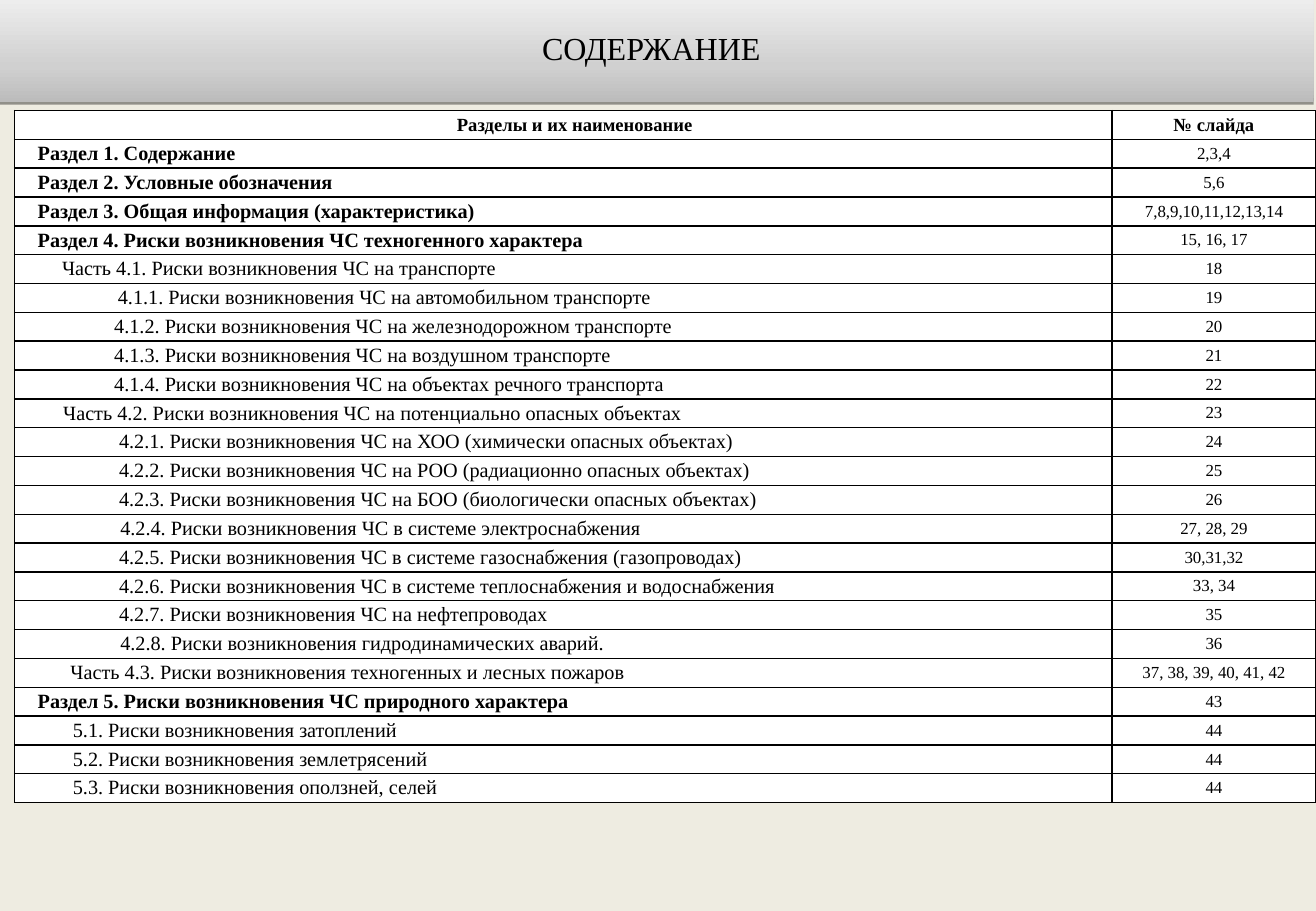
from lxml import etree
from pptx import Presentation
from pptx.dml.color import RGBColor
from pptx.enum.text import MSO_ANCHOR, MSO_AUTO_SIZE, PP_ALIGN
from pptx.oxml import parse_xml
from pptx.oxml.ns import nsdecls, qn
from pptx.util import Inches, Pt

MIDDLE = MSO_ANCHOR.MIDDLE
LEFT, CENTER = PP_ALIGN.LEFT, PP_ALIGN.CENTER
FONT = "Times New Roman"
BLACK = RGBColor(0, 0, 0)
WHITE = RGBColor(255, 255, 255)
CREAM = RGBColor(0xEE, 0xEC, 0xE1)
GRAYS = [(0, RGBColor(0xBC, 0xBC, 0xBC)), (35, RGBColor(0xD0, 0xD0, 0xD0)),
         (100, RGBColor(0xED, 0xED, 0xED))]

TITLE = "СОДЕРЖАНИЕ"
HEADS = ("Разделы и их наименование", "№ слайда")
# Indent in inches, section name, slide numbers
ROWS = [
    (0.19, "Раздел 1. Содержание", "2,3,4"),
    (0.19, "Раздел 2. Условные обозначения", "5,6"),
    (0.19, "Раздел 3. Общая информация (характеристика)", "7,8,9,10,11,12,13,14"),
    (0.19, "Раздел 4. Риски возникновения ЧС техногенного характера", "15, 16, 17"),
    (0.39, "Часть 4.1. Риски возникновения ЧС на транспорте", "18"),
    (0.85, "4.1.1. Риски возникновения ЧС на автомобильном транспорте", "19"),
    (0.82, "4.1.2. Риски возникновения ЧС на железнодорожном транспорте", "20"),
    (0.82, "4.1.3. Риски возникновения ЧС на воздушном транспорте", "21"),
    (0.82, "4.1.4. Риски возникновения ЧС на объектах речного транспорта", "22"),
    (0.4, "Часть 4.2. Риски возникновения ЧС на потенциально опасных объектах", "23"),
    (0.86, "4.2.1. Риски возникновения ЧС на ХОО (химически опасных объектах)", "24"),
    (0.86, "4.2.2. Риски возникновения ЧС на РОО (радиационно опасных объектах)", "25"),
    (0.86, "4.2.3. Риски возникновения ЧС на БОО (биологически опасных объектах)", "26"),
    (0.87, "4.2.4. Риски возникновения ЧС в системе электроснабжения", "27, 28, 29"),
    (0.86, "4.2.5. Риски возникновения ЧС в системе газоснабжения (газопроводах)", "30,31,32"),
    (0.86, "4.2.6. Риски возникновения ЧС в системе теплоснабжения и водоснабжения", "33, 34"),
    (0.86, "4.2.7. Риски возникновения ЧС на нефтепроводах", "35"),
    (0.87, "4.2.8. Риски возникновения гидродинамических аварий.", "36"),
    (0.46, "Часть 4.3. Риски возникновения техногенных и лесных пожаров",
     "37, 38, 39, 40, 41, 42"),
    (0.19, "Раздел 5. Риски возникновения ЧС природного характера", "43"),
    (0.48, "5.1. Риски возникновения затоплений", "44"),
    (0.48, "5.2. Риски возникновения землетрясений", "44"),
    (0.48, "5.3. Риски возникновения оползней, селей", "44"),
]
COLS = (9.03, 1.68)
TABLE_H = 5.7


def write(para, text, size, align, bold=False):
    para.alignment = align
    run = para.add_run()
    run.text = text
    font = run.font
    font.name, font.size, font.bold = FONT, Pt(size), bold
    font.color.rgb = BLACK


def set_cell(cell, text, size, align, bold=False, indent=0):
    """Fill one cell: text, black borders, white ground."""
    cell.margin_left = cell.margin_right = cell.margin_top = cell.margin_bottom = 0
    cell.vertical_anchor = MIDDLE
    para = cell.text_frame.paragraphs[0]
    write(para, text, size, align, bold)
    props = para._p.get_or_add_pPr()
    props.set("marL", str(Inches(indent)))
    props.set("indent", "0")
    borders = cell._tc.get_or_add_tcPr()
    for side in ("lnL", "lnR", "lnT", "lnB"):
        line = etree.SubElement(borders, qn("a:" + side), w=str(Pt(1)))
        fill = etree.SubElement(line, qn("a:solidFill"))
        etree.SubElement(fill, qn("a:srgbClr"), val=str(BLACK))
    cell.fill.solid()
    cell.fill.fore_color.rgb = WHITE


def add_title(slide):
    title = slide.shapes.title
    title.left, title.top = Inches(-0.02), Inches(0)
    title.width, title.height = Inches(10.83), Inches(0.84)
    stops = "".join(f'<a:gs pos="{pos * 1000}"><a:srgbClr val="{color}"/></a:gs>'
                    for pos, color in GRAYS)
    look = title._element.spPr
    look.append(parse_xml(
        f'<a:gradFill {nsdecls("a")} rotWithShape="1"><a:gsLst>{stops}</a:gsLst>'
        '<a:lin ang="16200000" scaled="0"/></a:gradFill>'))
    look.append(parse_xml(
        f'<a:effectLst {nsdecls("a")}><a:outerShdw blurRad="0" dist="{Pt(1.6)}" '
        f'dir="5400000" rotWithShape="0"><a:srgbClr val="{BLACK}">'
        '<a:alpha val="38000"/></a:srgbClr></a:outerShdw></a:effectLst>'))
    frame = title.text_frame
    frame.auto_size, frame.word_wrap = MSO_AUTO_SIZE.NONE, True
    frame.vertical_anchor = MIDDLE
    frame.margin_left, frame.margin_right = Inches(0.07), Inches(0.14)
    frame.margin_top = frame.margin_bottom = Inches(0.04)
    para = frame.paragraphs[0]
    para.line_spacing = 0.8
    write(para, TITLE, 19, CENTER)


def add_contents(slide):
    count = len(ROWS) + 1
    table = slide.shapes.add_table(count, len(COLS), Inches(0.12), Inches(0.91),
                                   Inches(sum(COLS)), Inches(TABLE_H)).table
    table.first_row = table.horz_banding = False
    for col, width in zip(table.columns, COLS):
        col.width = Inches(width)
    for row in table.rows:
        row.height = Inches(TABLE_H / count)
    set_cell(table.cell(0, 0), HEADS[0], 11, CENTER, True, 0.19)
    set_cell(table.cell(0, 1), HEADS[1], 11, CENTER, True)
    for i, (indent, name, pages) in enumerate(ROWS, 1):
        set_cell(table.cell(i, 0), name, 12, LEFT, name.startswith("Раздел"), indent)
        set_cell(table.cell(i, 1), pages, 10, CENTER)


def main():
    deck = Presentation()
    deck.slide_width, deck.slide_height = Inches(10.83), Inches(7.5)
    slide = deck.slides.add_slide(deck.slide_layouts[5])
    slide.background.fill.solid()
    slide.background.fill.fore_color.rgb = CREAM
    add_contents(slide)
    add_title(slide)
    deck.save("out.pptx")


if __name__ == "__main__":
    main()
